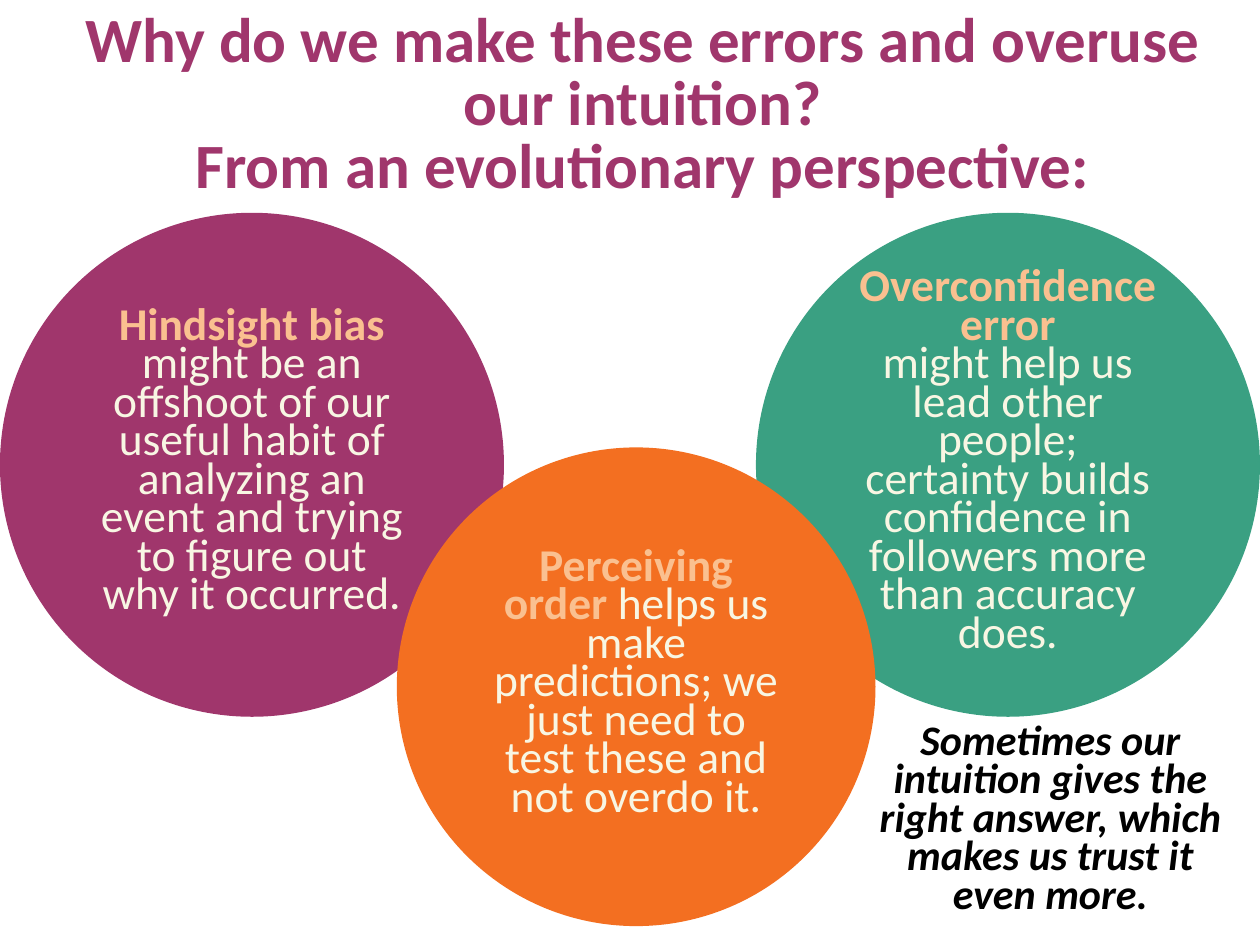
from dataclasses import dataclass

import pptx
import pptx.util
import pptx.dml.color
import pptx.enum.shapes
import pptx.enum.text

Cm = pptx.util.Cm
Pt = pptx.util.Pt
RGB = pptx.dml.color.RGBColor.from_string


@dataclass(frozen=True)
class Theme:
    font: str = "Calibri"
    purple: str = "A0366C"
    green: str = "3AA082"
    orange: str = "F36F21"
    peach: str = "FAC090"
    cream: str = "F8F6E3"
    black: str = "000000"
    title_size: int = 36
    title_leading: int = 36
    body_size: int = 26
    note_size: int = 24
    leading: int = 22


theme = Theme()


def set_frame(tf, left, top, right, bottom):
    tf.word_wrap = True
    tf.vertical_anchor = pptx.enum.text.MSO_ANCHOR.MIDDLE
    tf.margin_left, tf.margin_top = Cm(left), Cm(top)
    tf.margin_right, tf.margin_bottom = Cm(right), Cm(bottom)


def set_paragraph(p, size, leading, color=None, bold=None):
    p.alignment = pptx.enum.text.PP_ALIGN.CENTER
    p.line_spacing = Pt(leading)
    p.font.name = theme.font
    p.font.size = Pt(size)
    p.font.bold = bold
    if color:
        p.font.color.rgb = RGB(color)


prs = pptx.Presentation()
prs.slide_width, prs.slide_height = Cm(25.4), Cm(19.05)
s = prs.slides.add_slide(prs.slide_layouts[6])

# Title
tf = s.shapes.add_textbox(Cm(0), Cm(1.14), Cm(25.4), Cm(2.03)).text_frame
set_frame(tf, 0.76, 0.13, 0.25, 0.13)
p = tf.paragraphs[0]
p.text = ("Why do we make these errors and overuse our intuition?\v"
          "From an evolutionary perspective:")
set_paragraph(p, theme.title_size, theme.title_leading, theme.purple, True)

# Circles: left, top, diameter, fill, paragraphs of (highlight, plain text)
circles = [
    (0, 4.29, 10.16, theme.purple,
     [("Hindsight bias", ""),
      ("", "might be an offshoot of our useful habit of analyzing an event "
           "and trying to figure out why it occurred. ")]),
    (15.24, 4.29, 10.16, theme.green,
     [("Overconfidence error", ""),
      ("", "might help us lead other people; certainty builds confidence in "
           "followers more than accuracy does.")]),
    (8, 9.02, 9.65, theme.orange,
     [("Perceiving order ", "helps us make predictions; we just need to test "
                            "these and not overdo it.")]),
]
for left, top, size, fill, paragraphs in circles:
    sp = s.shapes.add_shape(pptx.enum.shapes.MSO_SHAPE.OVAL,
                            Cm(left), Cm(top), Cm(size), Cm(size))
    sp.shadow.inherit = False
    sp.fill.solid()
    sp.fill.fore_color.rgb = RGB(fill)
    sp.line.fill.background()
    tf = sp.text_frame
    set_frame(tf, 0.51, 0.51, 0.51, 0.51)
    for i, (highlight, plain) in enumerate(paragraphs):
        p = tf.add_paragraph() if i else tf.paragraphs[0]
        set_paragraph(p, theme.body_size, theme.leading)
        for text, color, bold in ((highlight, theme.peach, True),
                                  (plain, theme.cream, False)):
            if text:
                r = p.add_run()
                r.text = text
                r.font.bold = bold
                r.font.color.rgb = RGB(color)

# Closing note
tf = s.shapes.add_textbox(Cm(17.25), Cm(14.07), Cm(7.85), Cm(4.98)).text_frame
set_frame(tf, 0.25, 0.13, 0.25, 0.13)
p = tf.paragraphs[0]
p.text = ("Sometimes our intuition gives the right answer, "
          "which makes us trust it even more.")
set_paragraph(p, theme.note_size, theme.leading, theme.black, True)
p.font.italic = True
p.space_after = Pt(6)

prs.save("out.pptx")
